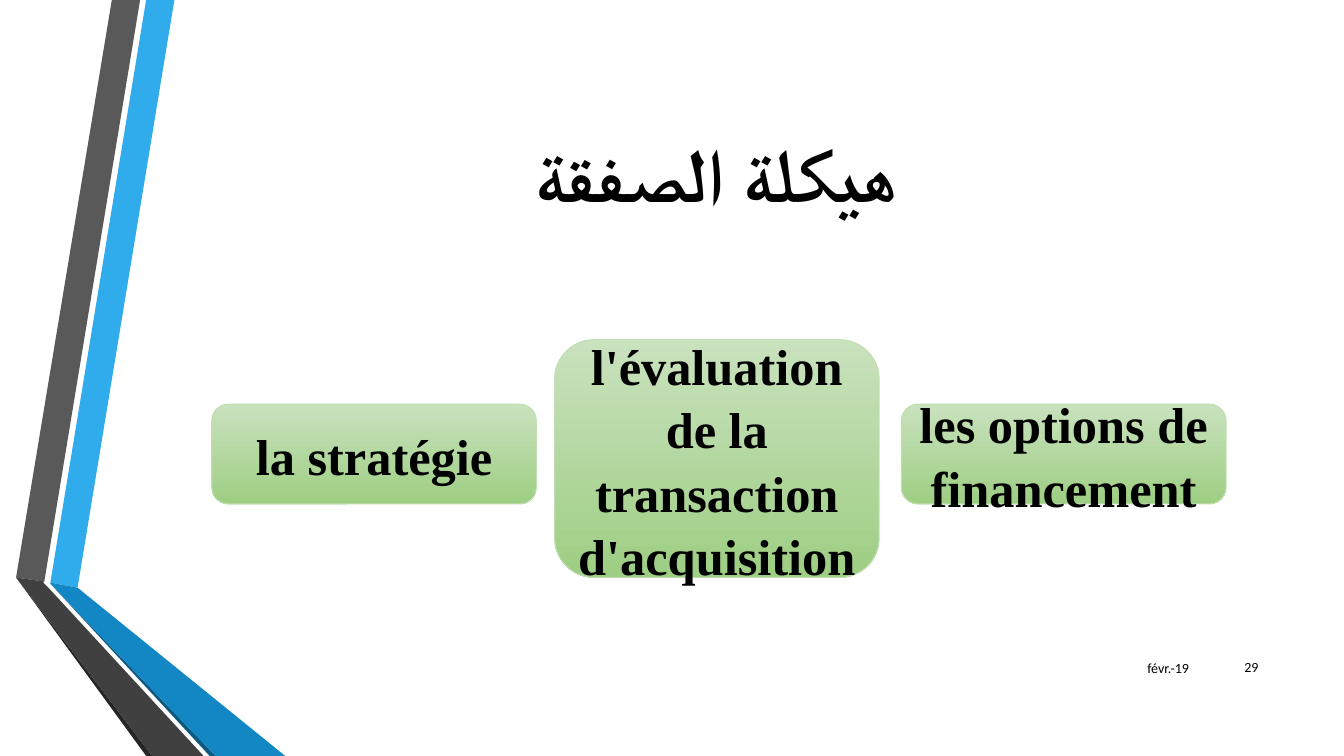
"""Build the slide on how a deal is structured."""
from lxml import etree
from pptx import Presentation, util as u
from pptx.dml.color import RGBColor
from pptx.enum import shapes, text
from pptx.oxml.ns import qn

PX = 9144
WIDE, HIGH = 1333, 750
BLACK = RGBColor(0, 0, 0)
PALE = RGBColor(0xC9, 0xE2, 0xBE)
GREEN = RGBColor(0x9E, 0xCE, 0x83)
EDGE = RGBColor(0xC0, 0xDE, 0xB3)
SERIF, SANS = "Times New Roman", "Calibri"
MID, RIGHT = text.PP_ALIGN.CENTER, text.PP_ALIGN.RIGHT

BANDS = [
    (RGBColor(0x30, 0xAC, 0xEC), [(50, 578), (77, 583), (173, 0), (145, 0)]),
    (RGBColor(0x59, 0x59, 0x59), [(139, 0), (111, 0), (16, 573), (44, 577)]),
    (RGBColor(0x26, 0x26, 0x26), [(16, 573), (145, 750), (151, 750)]),
    (RGBColor(0x0C, 0x5A, 0x82), [(50, 579), (208, 750), (214, 750)]),
    (RGBColor(0x12, 0x87, 0xC3),
     [(50, 579), (214, 750), (283, 750), (77, 583), (50, 578)]),
    (RGBColor(0x40, 0x40, 0x40),
     [(202, 750), (48, 583), (43, 578), (44, 577), (16, 573), (151, 750)]),
]
TITLE = "هيكلة الصفقة"
NOTES = [("févr.-19", (1064, 643, 125, 40)), ("29", (1198, 642, 60, 40))]
CARDS = [
    ("la stratégie", (210, 401, 322, 99)),
    ("l'évaluation de la transaction d'acquisition", (550, 337, 322, 236)),
    ("les options de financement", (894, 401, 322, 99)),
]


def write(shape, words, size, face, bold=False, align=MID, gap=None, rtl=False):
    """Put one formatted paragraph into a shape."""
    frame = shape.text_frame
    frame.word_wrap = True
    frame.vertical_anchor = text.MSO_ANCHOR.MIDDLE
    para = frame.paragraphs[0]
    para.alignment = align
    para.line_spacing = gap
    if rtl:
        para._p.get_or_add_pPr().set("rtl", "1")
    run = para.add_run()
    run.text = words
    font = run.font
    font.size, font.bold, font.name = u.Pt(size), bold, face
    font.color.rgb = BLACK
    etree.SubElement(run._r.get_or_add_rPr(), qn("a:cs")).set("typeface", face)


def scale(box):
    """Turn px into EMU."""
    return [n * PX for n in box]


def band(slide, color, points):
    """Draw one flat piece of the side ribbon."""
    pen = slide.shapes.build_freeform(*points[0], scale=PX)
    pen.add_line_segments(points[1:], close=True)
    shape = pen.convert_to_shape()
    shape.shadow.inherit = False
    shape.fill.solid()
    shape.fill.fore_color.rgb = color
    shape.line.fill.background()


def card(slide, words, box):
    """Draw one rounded green card."""
    kind = shapes.MSO_SHAPE.ROUNDED_RECTANGLE
    shape = slide.shapes.add_shape(kind, *scale(box))
    shape.shadow.inherit = False
    shape.fill.gradient()
    shape.fill.gradient_angle = 270
    for stop, color, at in zip(shape.fill.gradient_stops, (PALE, GREEN), (0, 1)):
        stop.color.rgb = color
        stop.position = at
    shape.line.color.rgb = EDGE
    shape.line.width = u.Pt(0.75)
    write(shape, words, 36, SERIF, bold=True, gap=1.05)


def main():
    """Make and save the deck."""
    deck = Presentation()
    deck.slide_width, deck.slide_height = scale((WIDE, HIGH))
    slide = deck.slides.add_slide(deck.slide_layouts[6])
    for color, points in BANDS:
        band(slide, color, points)
    head = slide.shapes.add_textbox(*scale((162, 75, 1096, 192)))
    write(head, TITLE, 54, SERIF, bold=True, rtl=True)
    for words, box in NOTES:
        note = slide.shapes.add_textbox(*scale(box))
        write(note, words, 10, SANS, align=RIGHT)
    for words, box in CARDS:
        card(slide, words, box)
    deck.save("out.pptx")


if __name__ == "__main__":
    main()
